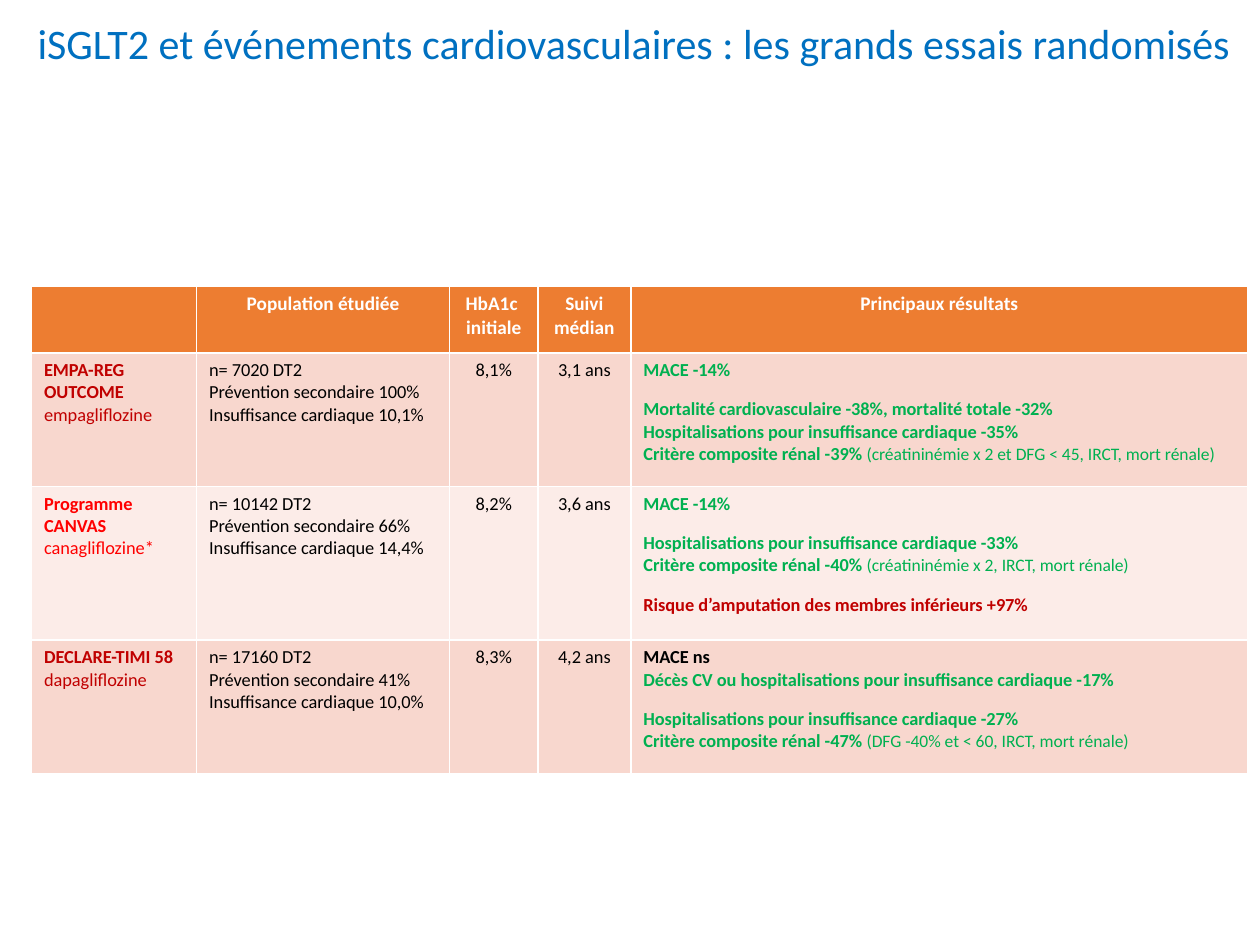
"""Build a slide comparing the large randomised SGLT2 inhibitor trials."""
from dataclasses import dataclass
from typing import Optional

from pptx import Presentation
from pptx.dml.color import RGBColor
from pptx.enum.text import MSO_AUTO_SIZE as AutoSize, PP_ALIGN as Align
from pptx.util import Pt

FONT = "Calibri"
TITLE_BLUE = RGBColor(0x00, 0x70, 0xC0)
ORANGE = RGBColor(0xED, 0x7D, 0x31)
DARK_BAND = RGBColor(0xF8, 0xD7, 0xCE)
LIGHT_BAND = RGBColor(0xFC, 0xEC, 0xE8)
WHITE = RGBColor(0xFF, 0xFF, 0xFF)
BLACK = RGBColor(0x00, 0x00, 0x00)
GREEN = RGBColor(0x00, 0xB0, 0x50)
DARK_RED = RGBColor(0xC0, 0x00, 0x00)
RED = RGBColor(0xFF, 0x00, 0x00)

COLUMN_WIDTHS = (94.3, 144.7, 50.4, 53.1, 352.8)
ROW_HEIGHTS = (38.2, 76.3, 87.8, 76.3)
GROUP_GAP = 9.75


@dataclass(frozen=True)
class Line:
    text: str
    color: RGBColor = BLACK
    bold: bool = False
    size: float = 10.5
    align: Optional[Align] = None
    gap: float = 0
    detail: str = ""


@dataclass(frozen=True)
class Trial:
    names: tuple[str, ...]
    drug: str
    color: RGBColor
    population: tuple[str, ...]
    hba1c: str
    follow_up: str
    results: tuple[Line, ...]


def result(text: str, color: RGBColor = GREEN, gap: float = 0, detail: str = "") -> Line:
    return Line(text, color, bold=True, gap=gap, detail=detail)


HEADERS = (
    (),
    ("Population étudiée",),
    ("HbA1c ", "initiale"),
    ("Suivi", "médian"),
    ("Principaux résultats",),
)

TRIALS = (
    Trial(
        ("EMPA-REG", "OUTCOME"), "empagliflozine", DARK_RED,
        ("n= 7020 DT2", "Prévention secondaire 100%", "Insuffisance cardiaque 10,1%"),
        "8,1%", "3,1 ans",
        (
            result("MACE -14%"),
            result("Mortalité cardiovasculaire -38%, mortalité totale -32%", gap=GROUP_GAP),
            result("Hospitalisations pour insuffisance cardiaque -35%"),
            result("Critère composite rénal -39% ",
                   detail="(créatininémie x 2 et DFG < 45, IRCT, mort rénale)"),
        ),
    ),
    Trial(
        ("Programme", "CANVAS"), "canagliflozine*", RED,
        ("n= 10142 DT2", "Prévention secondaire 66%", "Insuffisance cardiaque 14,4%"),
        "8,2%", "3,6 ans",
        (
            result("MACE -14%"),
            result("Hospitalisations pour insuffisance cardiaque -33%", gap=GROUP_GAP),
            result("Critère composite rénal -40% ",
                   detail="(créatininémie x 2, IRCT, mort rénale)"),
            result("Risque d’amputation des membres inférieurs +97%", DARK_RED, GROUP_GAP),
        ),
    ),
    Trial(
        ("DECLARE-TIMI 58",), "dapagliflozine", DARK_RED,
        ("n= 17160 DT2", "Prévention secondaire 41%", "Insuffisance cardiaque 10,0%"),
        "8,3%", "4,2 ans",
        (
            result("MACE ns", BLACK),
            result("Décès CV ou hospitalisations pour insuffisance cardiaque -17%"),
            result("Hospitalisations pour insuffisance cardiaque -27%", gap=GROUP_GAP),
            result("Critère composite rénal -47% ",
                   detail="(DFG -40% et < 60, IRCT, mort rénale)"),
        ),
    ),
)


def write_lines(text_frame, lines: tuple[Line, ...]) -> None:
    for index, line in enumerate(lines):
        paragraph = text_frame.add_paragraph() if index else text_frame.paragraphs[0]
        paragraph.alignment = line.align
        if line.gap:
            paragraph.space_before = Pt(line.gap)
        font = paragraph.font
        font.name, font.size, font.bold = FONT, Pt(line.size), line.bold
        font.color.rgb = line.color
        run = paragraph.add_run()
        run.text = line.text
        if line.detail:
            run.font.bold = True
            detail = paragraph.add_run()
            detail.text = line.detail
            detail.font.size, detail.font.bold = Pt(10), False


def header_cells() -> list[tuple[Line, ...]]:
    return [tuple(Line(text, WHITE, True, 11, Align.CENTER) for text in texts)
            for texts in HEADERS]


def trial_cells(trial: Trial) -> list[tuple[Line, ...]]:
    names = tuple(Line(name, trial.color, True) for name in trial.names)
    return [
        names + (Line(trial.drug, trial.color),),
        tuple(Line(text) for text in trial.population),
        (Line(trial.hba1c, align=Align.CENTER),),
        (Line(trial.follow_up, align=Align.CENTER),),
        trial.results,
    ]


def add_title(slide) -> None:
    title = slide.shapes.add_textbox(Pt(10.8), Pt(6.5), Pt(702.7), Pt(36))
    title.text_frame.word_wrap = False
    title.text_frame.auto_size = AutoSize.SHAPE_TO_FIT_TEXT
    text = "iSGLT2 et événements cardiovasculaires : les grands essais randomisés"
    write_lines(title.text_frame, (Line(text, TITLE_BLUE, size=24, align=Align.CENTER),))


def add_trial_table(slide) -> None:
    rows = [header_cells()] + [trial_cells(trial) for trial in TRIALS]
    fills = (ORANGE, DARK_BAND, LIGHT_BAND, DARK_BAND)
    table = slide.shapes.add_table(
        len(rows), len(COLUMN_WIDTHS), Pt(18), Pt(163.5),
        Pt(sum(COLUMN_WIDTHS)), Pt(sum(ROW_HEIGHTS))).table
    for column, width in zip(table.columns, COLUMN_WIDTHS):
        column.width = Pt(width)
    for row, height, fill, contents in zip(table.rows, ROW_HEIGHTS, fills, rows):
        row.height = Pt(height)
        for cell, lines in zip(row.cells, contents):
            cell.fill.solid()
            cell.fill.fore_color.rgb = fill
            write_lines(cell.text_frame, lines)


def main() -> None:
    presentation = Presentation()
    presentation.slide_width, presentation.slide_height = Pt(720), Pt(540)
    slide = presentation.slides.add_slide(presentation.slide_layouts[6])
    add_title(slide)
    add_trial_table(slide)
    presentation.save("out.pptx")


if __name__ == "__main__":
    main()
